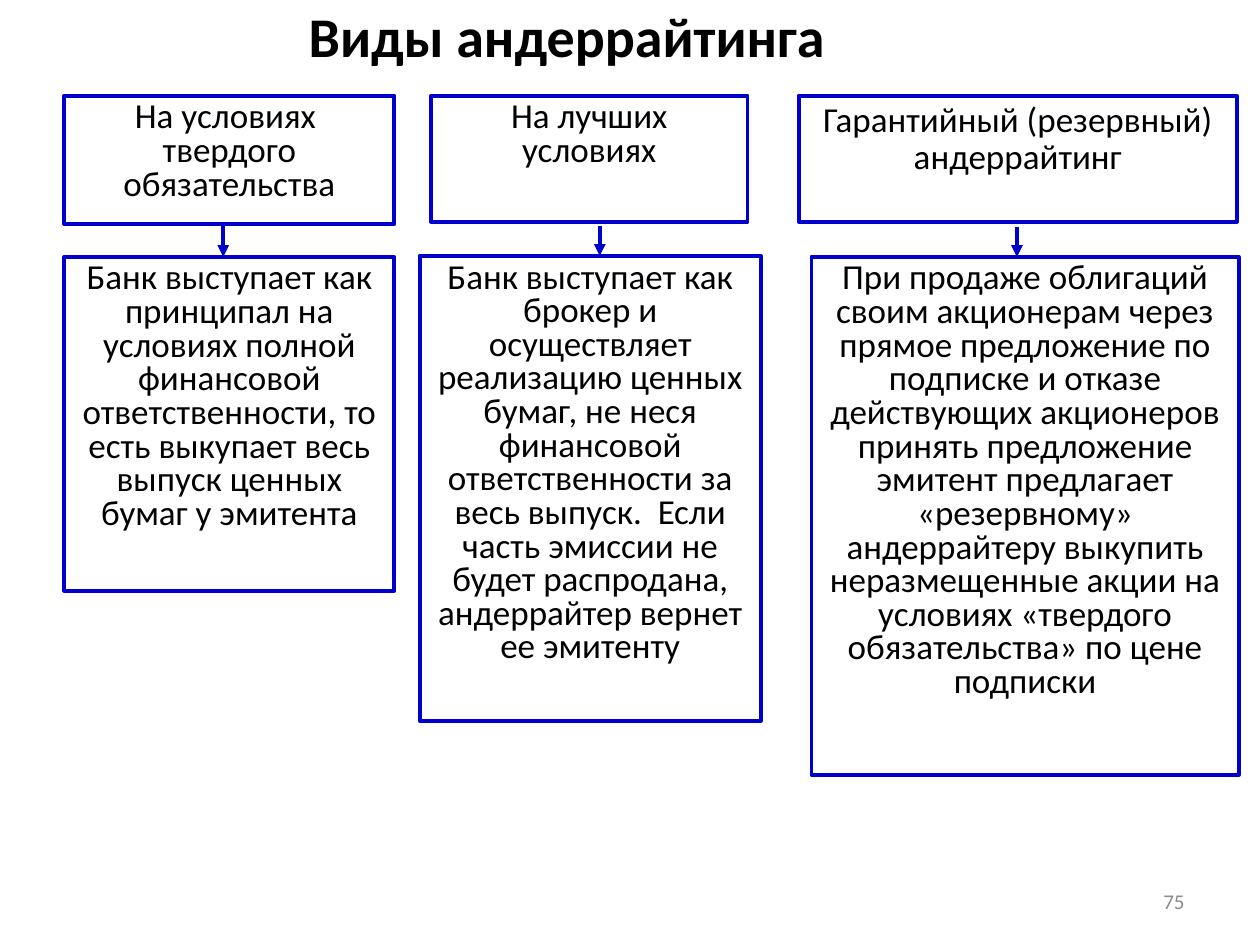
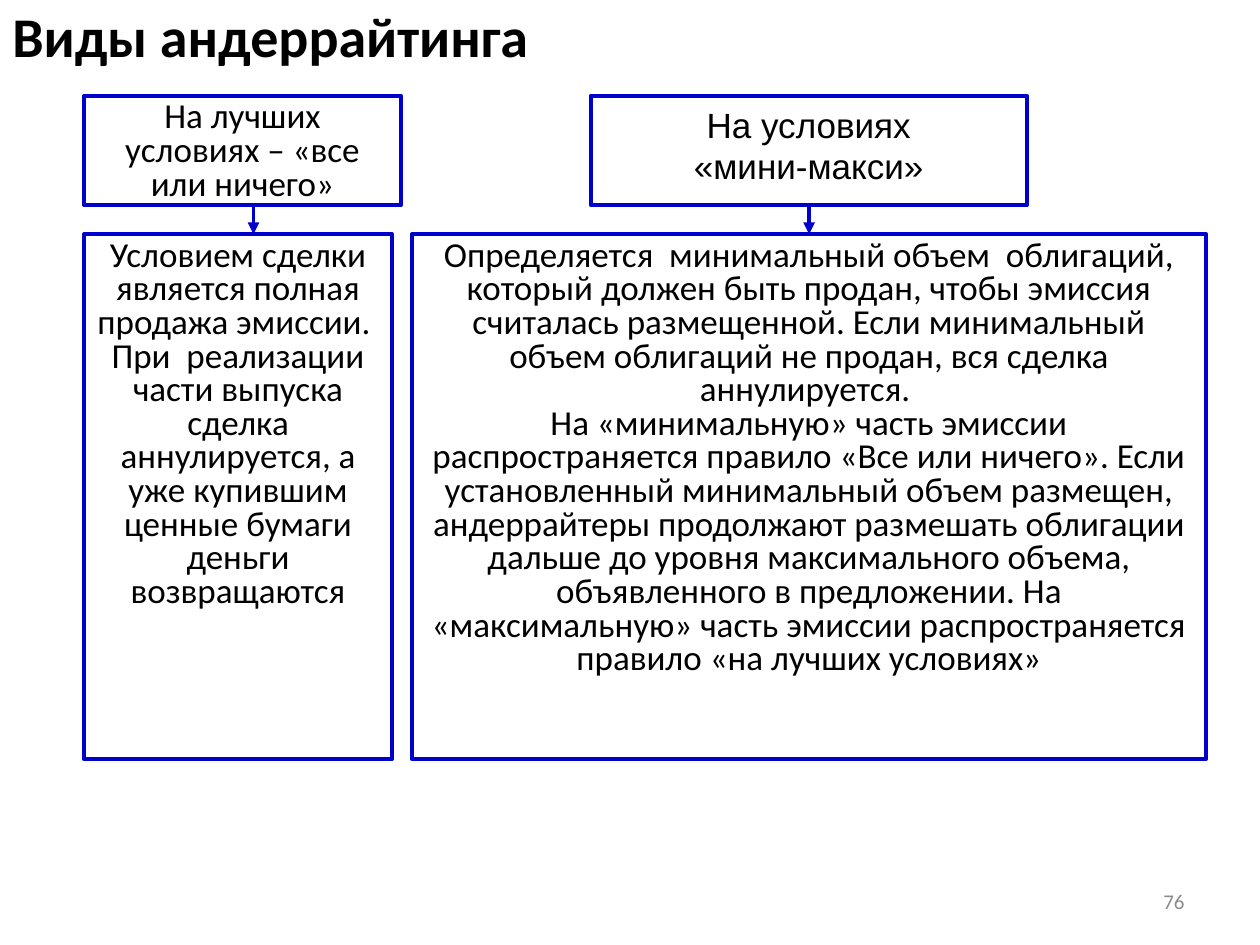
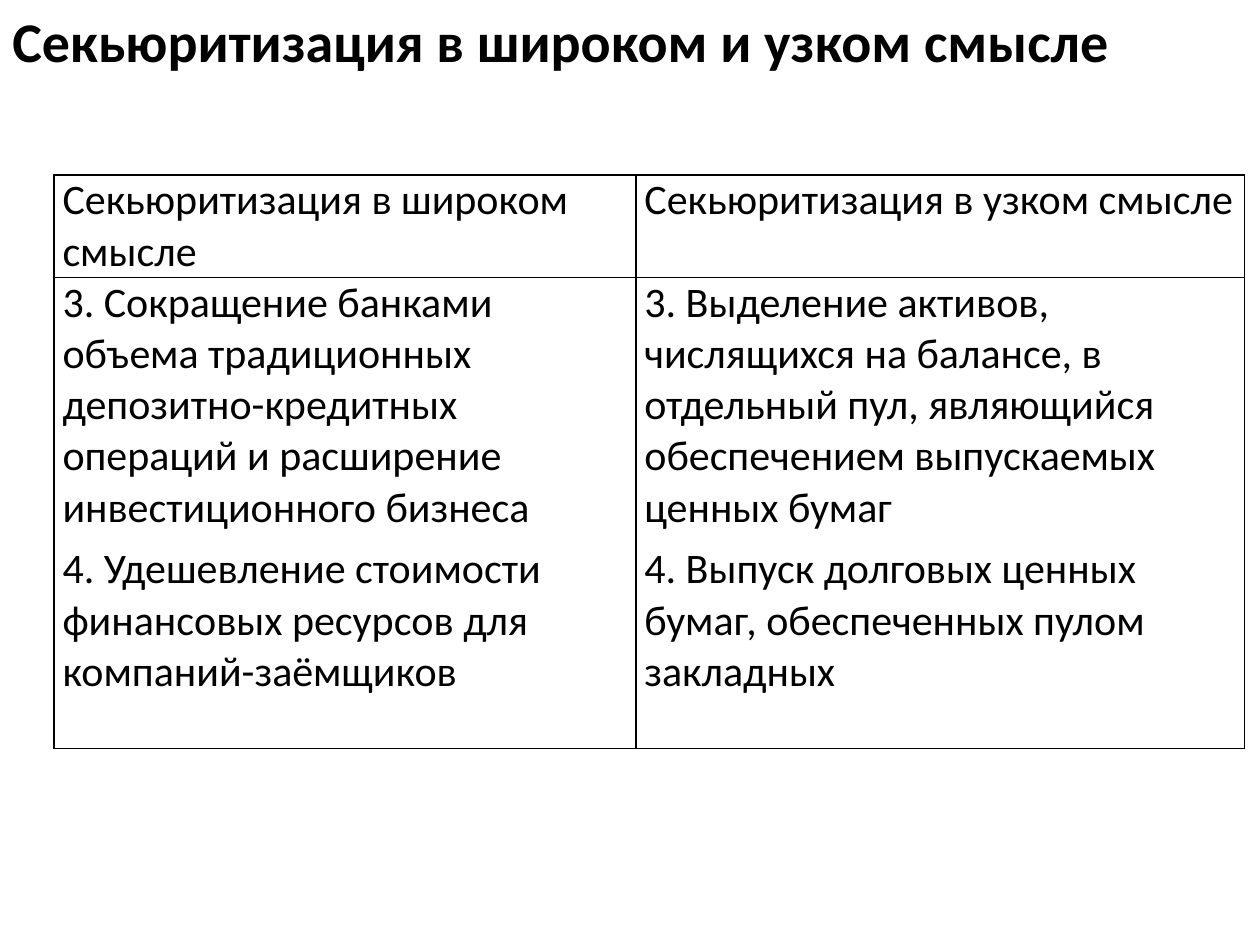
from dataclasses import dataclass

from lxml.etree import SubElement
from pptx import Presentation
from pptx.dml.color import RGBColor
from pptx.enum.shapes import MSO_CONNECTOR, MSO_SHAPE
from pptx.enum.text import MSO_ANCHOR, PP_ALIGN
from pptx.oxml.ns import qn
from pptx.slide import Slide
from pptx.table import _Cell
from pptx.text.text import TextFrame
from pptx.util import Cm, Pt

COLORS = {"text": "000000", "frame": "0000CC", "number": "8C8C8C", "border": "000000"}
LINE_WIDTH = Pt(2.25)
HEADING_TOP = 1.93


@dataclass(frozen=True)
class Box:
    """A framed text; lengths are in centimetres."""
    left: float
    top: float
    width: float
    height: float
    paragraphs: tuple[str, ...]
    spacings: tuple[float, ...] = (0.8, 0.8)
    font: str = "Calibri"
    anchor: MSO_ANCHOR = MSO_ANCHOR.TOP


@dataclass(frozen=True)
class Column:
    """A kind of underwriting: heading, arrow and explanation."""
    heading: Box
    body: Box
    arrow_x: float
    arrow_top: float


# Slide content
FIRST_COLUMNS = (
    Column(
        Box(1.3, HEADING_TOP, 6.65, 2.59, ("На условиях  твердого обязательства",)),
        Box(1.3, 5.18, 6.65, 6.73, (
            "Банк выступает как принципал на условиях полной финансовой ответственности, "
            "то есть выкупает весь выпуск ценных бумаг у эмитента",)),
        4.5, 4.55),
    Column(
        Box(8.69, HEADING_TOP, 6.38, 2.54, ("На лучших условиях",)),
        Box(8.46, 5.16, 6.88, 9.37, (
            "Банк выступает как брокер и осуществляет реализацию ценных бумаг, не неся "
            "финансовой ответственности за весь выпуск.  Если часть эмиссии не будет "
            "распродана, андеррайтер вернет ее эмитенту",)),
        12.09, 4.55),
    Column(
        Box(16.1, HEADING_TOP, 8.84, 2.54, ("Гарантийный (резервный) андеррайтинг",), (0.9,)),
        Box(16.36, 5.18, 8.61, 10.44, (
            "При продаже облигаций своим акционерам через прямое предложение по подписке и "
            "отказе действующих акционеров принять предложение эмитент предлагает "
            "«резервному» андеррайтеру выкупить неразмещенные акции на условиях «твердого "
            "обязательства» по цене подписки",)),
        20.5, 4.57),
)

SECOND_COLUMNS = (
    Column(
        Box(1.7, HEADING_TOP, 6.38, 2.21, ("На лучших условиях – «все или ничего»",)),
        Box(1.7, 4.72, 6.2, 10.59, (
            "Условием сделки является полная продажа эмиссии. ",
            "При  реализации части выпуска сделка аннулируется, а уже купившим ценные "
            "бумаги деньги возвращаются")),
        5.11, 4.11),
    Column(
        Box(11.91, HEADING_TOP, 8.79, 2.21, ("На условиях", "«мини-макси»"),
            (0.7, 1.0), "Arial", MSO_ANCHOR.MIDDLE),
        Box(8.31, 4.72, 16, 10.59, (
            "Определяется  минимальный объем  облигаций, который должен быть продан, чтобы "
            "эмиссия считалась размещенной. Если минимальный объем облигаций не продан, "
            "вся сделка аннулируется. ",
            "На «минимальную» часть эмиссии распространяется правило «Все или ничего». Если "
            "установленный минимальный объем размещен, андеррайтеры продолжают размешать "
            "облигации дальше до уровня максимального объема, объявленного в предложении. "
            "На «максимальную» часть эмиссии распространяется правило «на лучших условиях»")),
        16.31, 4.11),
)

TABLE_ROWS = (
    (("Секьюритизация в широком смысле",), ("Секьюритизация в узком смысле",)),
    (("3. Сокращение банками объема традиционных депозитно-кредитных операций и "
      "расширение инвестиционного бизнеса",
      "4. Удешевление стоимости финансовых ресурсов для компаний-заёмщиков"),
     ("3. Выделение активов, числящихся на балансе, в отдельный пул, являющийся "
      "обеспечением выпускаемых ценных бумаг",
      "4. Выпуск долговых ценных бумаг, обеспеченных пулом закладных")),
)


# Shared drawing
def write(frame: TextFrame, text: str, *, size: float, color: str = "text",
          font: str = "Calibri", bold: bool = False, align: PP_ALIGN = PP_ALIGN.LEFT,
          spacing: float = 1.0, before: float = 0, after: float = 0) -> None:
    """Add one formatted paragraph, using the first one while it is empty."""
    para = frame.paragraphs[0]
    if para.runs:
        para = frame.add_paragraph()
    para.alignment = align
    para.line_spacing = spacing
    para.space_before, para.space_after = Pt(before), Pt(after)
    span = para.add_run()
    span.text = text
    span.font.name, span.font.size, span.font.bold = font, Pt(size), bold
    span.font.color.rgb = RGBColor.from_string(COLORS[color])


def add_text_box(page: Slide, left: float, top: float, width: float, height: float,
                 anchor: MSO_ANCHOR = MSO_ANCHOR.TOP) -> TextFrame:
    frame = page.shapes.add_textbox(Cm(left), Cm(top), Cm(width), Cm(height)).text_frame
    frame.word_wrap = True
    frame.vertical_anchor = anchor
    return frame


def add_title(page: Slide, text: str, *, top: float = 0.05, height: float = 1.27,
              align: PP_ALIGN = PP_ALIGN.LEFT, spacing: float = 0.9, after: float = 6) -> None:
    frame = add_text_box(page, 0, top, 22.86, height)
    write(frame, text, size=32, bold=True, align=align, spacing=spacing, after=after)


def add_page_number(page: Slide, number: int) -> None:
    frame = add_text_box(page, 18.21, 17.65, 5.92, 1.02, MSO_ANCHOR.MIDDLE)
    write(frame, str(number), size=12, color="number", align=PP_ALIGN.RIGHT)


def add_box(page: Slide, box: Box) -> None:
    shape = page.shapes.add_shape(MSO_SHAPE.RECTANGLE, Cm(box.left), Cm(box.top),
                                  Cm(box.width), Cm(box.height))
    shape.shadow.inherit = False
    shape.fill.background()
    shape.line.color.rgb = RGBColor.from_string(COLORS["frame"])
    shape.line.width = LINE_WIDTH
    frame = shape.text_frame
    frame.word_wrap = True
    frame.vertical_anchor = box.anchor
    for text, spacing in zip(box.paragraphs, box.spacings):
        write(frame, text, size=20, font=box.font, align=PP_ALIGN.CENTER, spacing=spacing)


def add_arrow(page: Slide, x: float, top: float, bottom: float) -> None:
    arrow = page.shapes.add_connector(MSO_CONNECTOR.STRAIGHT, Cm(x), Cm(top), Cm(x), Cm(bottom))
    arrow.line.color.rgb = RGBColor.from_string(COLORS["frame"])
    arrow.line.width = LINE_WIDTH
    SubElement(arrow.line._get_or_add_ln(), qn("a:tailEnd"), type="triangle")
    SubElement(arrow._element.spPr, qn("a:effectLst"))


def add_columns(page: Slide, columns: tuple[Column, ...]) -> None:
    for column in columns:
        add_box(page, column.heading)
        add_box(page, column.body)
        add_arrow(page, column.arrow_x, column.arrow_top, column.body.top)


def set_borders(cell: _Cell) -> None:
    properties = cell._tc.get_or_add_tcPr()
    for side in ("lnL", "lnR", "lnT", "lnB"):
        line = SubElement(properties, qn(f"a:{side}"), w=str(Pt(1)))
        fill = SubElement(line, qn("a:solidFill"))
        SubElement(fill, qn("a:srgbClr"), val=COLORS["border"])


def add_comparison(page: Slide) -> None:
    widths, heights = (11.73, 12.27), (2.06, 9.5)
    table = page.shapes.add_table(len(heights), len(widths), Cm(1.09), Cm(3.53),
                                  Cm(sum(widths)), Cm(sum(heights))).table
    table.first_row = table.horz_banding = False
    for column, width in zip(table.columns, widths):
        column.width = Cm(width)
    for row, height, texts in zip(table.rows, heights, TABLE_ROWS):
        row.height = Cm(height)
        for cell, paragraphs in zip(row.cells, texts):
            cell.margin_left = cell.margin_right = Cm(0.17)
            cell.margin_top = cell.margin_bottom = 0
            set_borders(cell)
            cell.fill.background()
            for text in paragraphs:
                write(cell.text_frame, text, size=24, before=3, after=3)


def main() -> None:
    deck = Presentation()
    deck.slide_width, deck.slide_height = Cm(25.4), Cm(19.05)
    first, second, third = (deck.slides.add_slide(deck.slide_layouts[6]) for _ in range(3))

    # Kinds of underwriting
    add_title(first, "Виды андеррайтинга", align=PP_ALIGN.CENTER)
    add_page_number(first, 75)
    add_columns(first, FIRST_COLUMNS)

    # Kinds of underwriting, continued
    add_title(second, "Виды андеррайтинга")
    add_page_number(second, 76)
    add_columns(second, SECOND_COLUMNS)

    # Securitization table
    add_title(third, "Секьюритизация в широком и узком смысле", top=0, height=3.18,
              spacing=1.0, after=0)
    add_comparison(third)

    deck.save("out.pptx")


if __name__ == "__main__":
    main()
